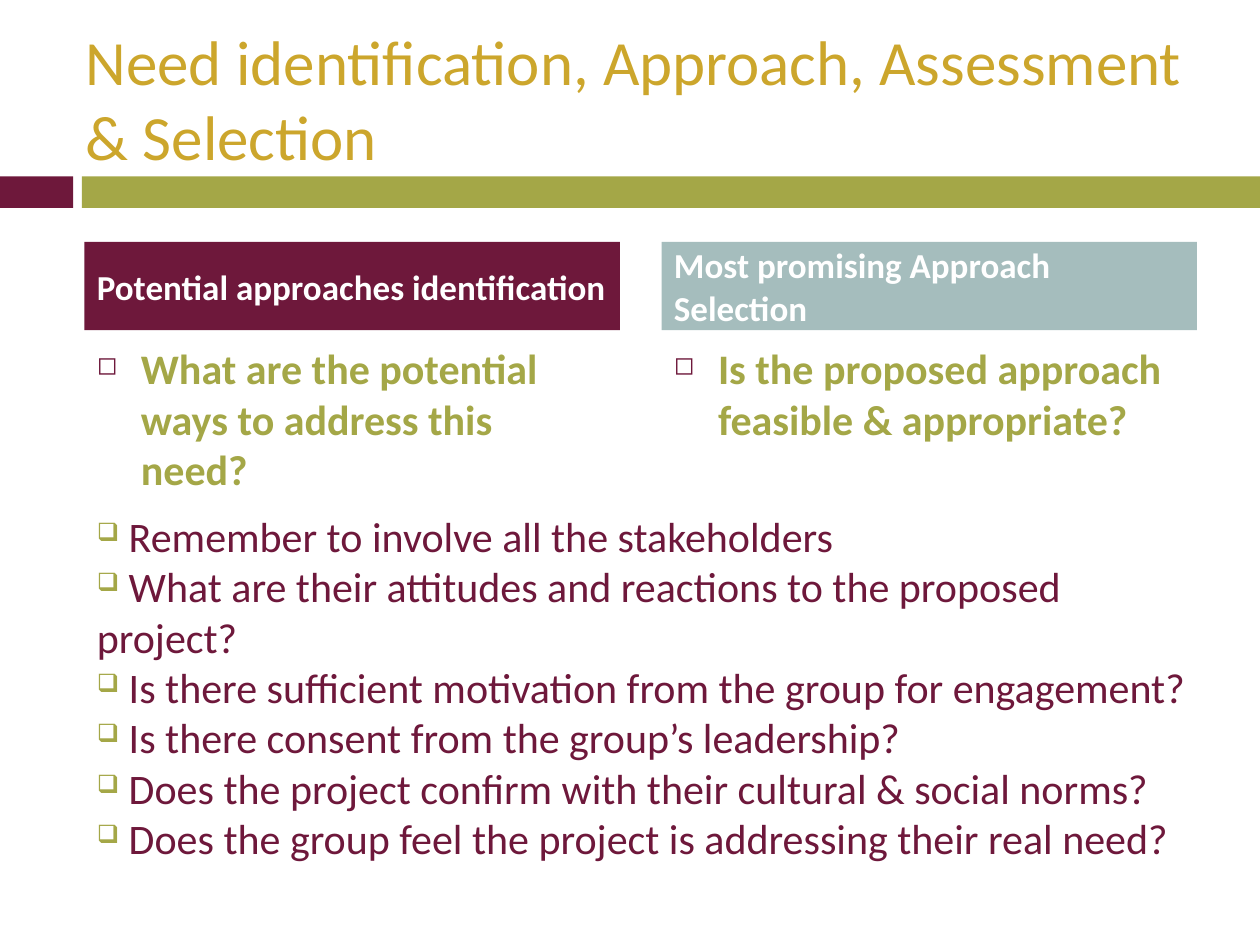
from lxml import etree
from pptx import Presentation
from pptx.dml.color import RGBColor
from pptx.enum.shapes import MSO_SHAPE
from pptx.enum.text import MSO_ANCHOR, MSO_AUTO_SIZE, PP_ALIGN
from pptx.oxml.ns import qn
from pptx.util import Inches, Pt

RECT = MSO_SHAPE.RECTANGLE
MIDDLE, TOP = MSO_ANCHOR.MIDDLE, MSO_ANCHOR.TOP
LEFT = PP_ALIGN.LEFT
NO_FIT = MSO_AUTO_SIZE.NONE
PLUM, OLIVE, GOLD, TEAL, WHITE = "6E183B", "A4A747", "CCA62C", "A5BDBD", "FFFFFF"

# Content
TITLE = "Need identification, Approach, Assessment & Selection"
COLUMNS = [
    ("Potential approaches identification", PLUM,
     "What are the potential ways to address this need?"),
    ("Most promising Approach Selection", TEAL,
     "Is the proposed approach feasible & appropriate?"),
]
CHECKS = [
    " Remember to involve all the stakeholders",
    " What are their attitudes and reactions to the proposed project?",
    " Is there sufficient motivation from the group for engagement?",
    " Is there consent from the group’s leadership?",
    " Does the project confirm with their cultural & social norms?",
    " Does the group feel the project is addressing their real need?",
]
BANDS = [(0, 0.58, PLUM), (0.65, 9.35, OLIVE)]
EDGE, STEP, WIDE = 0.67, 4.58, 4.25


def rgb(code):
    return RGBColor.from_string(code)


def add_bullet(para, char, color, indent=0):
    props = para._p.get_or_add_pPr()
    props.set("marL", str(Inches(indent)))
    props.set("indent", str(-Inches(indent)))
    tint = etree.SubElement(props, qn("a:buClr"))
    etree.SubElement(tint, qn("a:srgbClr"), val=color)
    etree.SubElement(props, qn("a:buSzPct"), val="60000")
    etree.SubElement(props, qn("a:buChar"), char=char)


def write(shape, lines, size, color, bold=False, anchor=TOP, before=0, bullet=None):
    frame = shape.text_frame
    frame.word_wrap = True
    frame.auto_size = NO_FIT
    frame.vertical_anchor = anchor
    frame.text = "\n".join(lines)
    for para in frame.paragraphs:
        para.alignment = LEFT
        para.space_before = Pt(before)
        if bullet:
            add_bullet(para, *bullet)
        font = para.font
        font.name, font.size, font.bold = "Calibri", Pt(size), bold
        font.color.rgb = rgb(color)


def add_box(slide, x, y, w, h, fill):
    box = slide.shapes.add_shape(RECT, Inches(x), Inches(y), Inches(w), Inches(h))
    box.shadow.inherit = False
    box.fill.solid()
    box.fill.fore_color.rgb = rgb(fill)
    box.line.fill.background()
    return box


def add_text(slide, x, y, w, h):
    return slide.shapes.add_textbox(Inches(x), Inches(y), Inches(w), Inches(h))


def main():
    deck = Presentation()
    deck.slide_width, deck.slide_height = Inches(10), Inches(7.5)
    slide = deck.slides.add_slide(deck.slide_layouts[5])

    # Title and the bands below it
    for x, w, fill in BANDS:
        add_box(slide, x, 1.4, w, 0.25, fill)
    title = slide.shapes.title
    title.left, title.top = Inches(0.58), Inches(0.3)
    title.width, title.height = Inches(8.92), Inches(0.95)
    write(title, [TITLE], 36, GOLD, anchor=MIDDLE)

    # Two columns: heading and question
    for i, (head, fill, ask) in enumerate(COLUMNS):
        x = EDGE + i * STEP
        write(add_text(slide, x, 2.67, WIDE, 1.25), [ask], 24, OLIVE, bold=True,
              before=7, bullet=("◻", PLUM, 0.35))
        write(add_box(slide, x, 1.92, WIDE, 0.7, fill), [head], 20, WHITE,
              bold=True, anchor=MIDDLE, before=7)

    # Checklist
    write(add_text(slide, EDGE, 4, 8.92, 2.52), CHECKS, 24, PLUM,
          bullet=("❑", OLIVE))

    deck.save("out.pptx")


if __name__ == "__main__":
    main()
